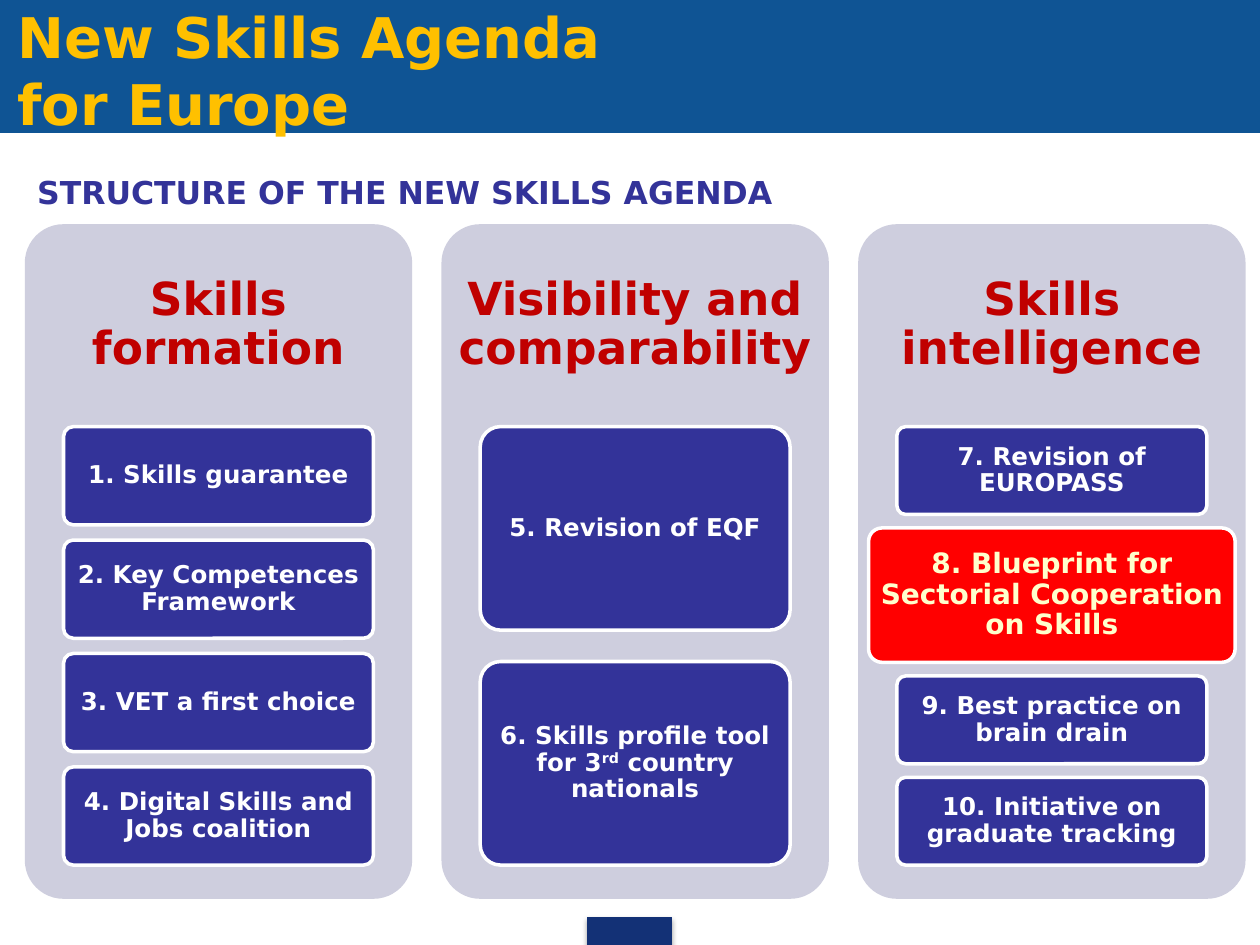
import pptx
import pptx.util
import pptx.dml.color
import pptx.enum.shapes
import pptx.enum.text
import lxml.etree

Cm = pptx.util.Cm
Pt = pptx.util.Pt
Shapes = pptx.enum.shapes.MSO_SHAPE
Align = pptx.enum.text.PP_ALIGN
Anchor = pptx.enum.text.MSO_ANCHOR

TITLE = "New Skills Agenda for Europe"
SUBTITLE = "STRUCTURE OF THE NEW SKILLS AGENDA"
SUPERSCRIPT_MARK = "^"
COLUMNS = [
    ("Skills formation", [
        "1. Skills guarantee",
        "2. Key Competences Framework",
        "3. VET a first choice",
        "4. Digital Skills and Jobs coalition",
    ]),
    ("Visibility and comparability", [
        "5. Revision of EQF",
        "6. Skills profile tool for 3^rd^ country nationals",
    ]),
    ("Skills intelligence", [
        "7. Revision of EUROPASS",
        "8. Blueprint for Sectorial Cooperation on Skills",
        "9. Best practice on brain drain",
        "10. Initiative on graduate tracking",
    ]),
]
HIGHLIGHT = "8. Blueprint for Sectorial Cooperation on Skills"

THEME = {
    "font": "DejaVu Sans",
    "banner": "0F5494", "tab": "133176", "panel": "CECEDE", "card": "333399",
    "highlight": "FF0000", "outline": "FFFFFF",
    "title": "FFC000", "subtitle": "333399", "heading": "C00000",
    "card_text": "FFFFFF", "highlight_text": "FFFFCC",
    "title_size": 32, "subtitle_size": 18, "heading_size": 26,
    "card_size": 14, "highlight_size": 16,
}

PANEL_LEFT, PANEL_TOP, PANEL_WIDTH, PANEL_HEIGHT = 0.5, 4.52, 7.81, 13.6
PANEL_STEP = 8.4
HEADING_HEIGHT = PANEL_HEIGHT * 0.3
CARD_WIDTH = PANEL_WIDTH * 0.8
CARDS_TOP = PANEL_TOP + HEADING_HEIGHT
CARDS_HEIGHT = PANEL_HEIGHT * 0.65
GAP_RATIO = 2 / 13
HIGHLIGHT_WIDTH, HIGHLIGHT_RATIO = 7.39, 1.53


def color(name):
    return pptx.dml.color.RGBColor.from_string(THEME[name])


def write_text(shape, text, size, text_color, align=Align.LEFT,
               anchor=Anchor.MIDDLE, spacing=None, margins=(0.25, 0.13)):
    frame = shape.text_frame
    frame.word_wrap = True
    frame.auto_size = pptx.enum.text.MSO_AUTO_SIZE.NONE
    frame.vertical_anchor = anchor
    frame.margin_left = frame.margin_right = Cm(margins[0])
    frame.margin_top = frame.margin_bottom = Cm(margins[1])
    paragraph = frame.paragraphs[0]
    paragraph.alignment = align
    paragraph.line_spacing = spacing
    for index, part in enumerate(text.split(SUPERSCRIPT_MARK)):
        run = paragraph.add_run()
        run.text = part
        run.font.name = THEME["font"]
        run.font.size = Pt(THEME[size])
        run.font.bold = True
        run.font.color.rgb = color(text_color)
        if index % 2:
            run.font._element.set("baseline", "30000")


def add_box(slide, kind, left, top, width, height, fill, outline=None, line_width=0.75):
    shape = slide.shapes.add_shape(kind, Cm(left), Cm(top), Cm(width), Cm(height))
    shape.shadow.inherit = False
    shape.fill.solid()
    shape.fill.fore_color.rgb = color(fill)
    if outline:
        shape.line.color.rgb = color(outline)
        shape.line.width = Pt(line_width)
    else:
        shape.line.fill.background()
    if kind == Shapes.ROUNDED_RECTANGLE:
        shape.adjustments[0] = 0.1
    return shape


def add_text_box(slide, left, top, width, height):
    return slide.shapes.add_textbox(Cm(left), Cm(top), Cm(width), Cm(height))


def add_drop_shadow(shape):
    namespace = pptx.oxml.ns.qn
    effects = shape._element.spPr.find(namespace("a:effectLst"))
    shadow = lxml.etree.SubElement(
        effects, namespace("a:outerShdw"), blurRad=str(Pt(3.1)),
        dist=str(Pt(1.8)), dir="5400000", rotWithShape="0")
    shade = lxml.etree.SubElement(shadow, namespace("a:srgbClr"), val="000000")
    lxml.etree.SubElement(shade, namespace("a:alpha"), val="35000")


def add_column(slide, left, heading, cards):
    add_box(slide, Shapes.ROUNDED_RECTANGLE, left, PANEL_TOP,
            PANEL_WIDTH, PANEL_HEIGHT, "panel")
    heading_box = add_text_box(slide, left, PANEL_TOP, PANEL_WIDTH, HEADING_HEIGHT)
    write_text(heading_box, heading, "heading_size", "heading",
               align=Align.CENTER, spacing=0.9, margins=(0.28, 0.28))

    weights = [HIGHLIGHT_RATIO if card == HIGHLIGHT else 1 for card in cards]
    unit = CARDS_HEIGHT / (sum(weights) + GAP_RATIO * (len(cards) - 1))
    top = CARDS_TOP
    for card, weight in zip(cards, weights):
        style = "highlight" if card == HIGHLIGHT else "card"
        width = HIGHLIGHT_WIDTH if card == HIGHLIGHT else CARD_WIDTH
        box = add_box(slide, Shapes.ROUNDED_RECTANGLE, left + (PANEL_WIDTH - width) / 2,
                      top, width, unit * weight, style, "outline", 2)
        write_text(box, card, style + "_size", style + "_text",
                   align=Align.CENTER, spacing=0.9, margins=(0.1, 0.08))
        top += unit * (weight + GAP_RATIO)


def main():
    presentation = pptx.Presentation()
    presentation.slide_width = Cm(25.4)
    presentation.slide_height = Cm(19.05)
    slide = presentation.slides.add_slide(presentation.slide_layouts[5])

    banner = add_box(slide, Shapes.RECTANGLE, 0, 0, 25.4, 2.67, "banner", "banner")
    tab = add_box(slide, Shapes.RECTANGLE, 11.84, 18.49, 1.7, 0.56, "tab", "tab")
    add_drop_shadow(tab)

    title = slide.shapes.title
    title._element.addprevious(banner._element)
    title.left, title.top, title.width, title.height = Cm(0.1), Cm(-0.08), Cm(13.92), Cm(3)
    write_text(title, TITLE, "title_size", "title", anchor=Anchor.TOP)

    for index, (heading, cards) in enumerate(COLUMNS):
        add_column(slide, PANEL_LEFT + index * PANEL_STEP, heading, cards)

    subtitle = add_text_box(slide, 0.5, 2.67, 22.86, 2.39)
    write_text(subtitle, SUBTITLE, "subtitle_size", "subtitle")

    presentation.save("out.pptx")


if __name__ == "__main__":
    main()
